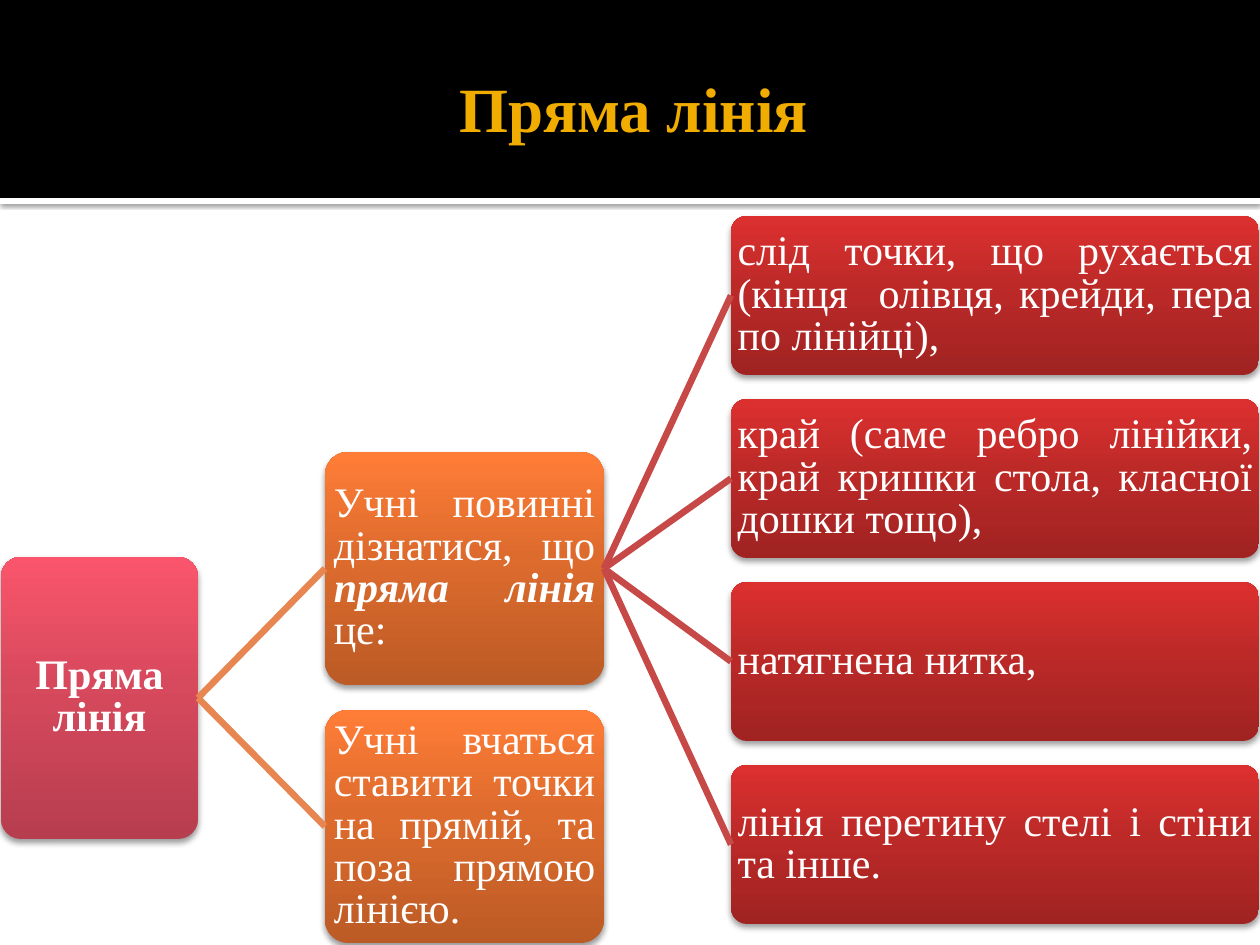
from pptx import Presentation
from pptx.dml.color import RGBColor
from pptx.enum.shapes import MSO_CONNECTOR, MSO_SHAPE
from pptx.enum.text import MSO_ANCHOR, PP_ALIGN
from pptx.oxml import parse_xml
from pptx.oxml.ns import nsdecls
from pptx.util import Pt

RECT, ROUNDED = MSO_SHAPE.RECTANGLE, MSO_SHAPE.ROUNDED_RECTANGLE
STRAIGHT = MSO_CONNECTOR.STRAIGHT
MIDDLE = MSO_ANCHOR.MIDDLE
CENTER, JUSTIFY = PP_ALIGN.CENTER, PP_ALIGN.JUSTIFY

EMU_PER_PX = 914400 / 126
FONT = "Times New Roman"
WHITE, BLACK, GOLD = "FFFFFF", "000000", "F0AD00"
ORANGE_LINE, RED_LINE = "E88651", "C64847"
# Gradient colours from bottom to top
PINK = ("B73E4F", "D7495D", "FA556C")
ORANGE = ("BC5B26", "DD6B2D", "FF7D37")
RED = ("A02322", "BC2A28", "DC302F")
STOPS = (0, 55, 100)

# Each text is a list of (wording, font format) spans
ROOT = [("Пряма лінія", {"bold": True})]
BRANCHES = [
    [("Учні повинні дізнатися, що ", {}),
     ("пряма лінія", {"bold": True, "italic": True}),
     (" це:", {})],
    [("Учні вчаться ставити точки на прямій, та поза прямою лінією.", {})],
]
LEAVES = [
    "слід точки, що рухається (кінця  олівця, крейди, пера по лінійці),",
    "край (саме ребро лінійки, край кришки стола, класної дошки тощо),",
    "натягнена нитка,",
    "лінія перетину стелі і стіни та інше.",
]


def px(value):
    return round(value * EMU_PER_PX)


def color(value):
    return RGBColor.from_string(value)


def set_values(target, values):
    for name, value in values.items():
        setattr(target, name, value)


def add_shadow(shape, opacity, blur, distance):
    shape._element.spPr.append(parse_xml(
        f'<a:effectLst {nsdecls("a")}><a:outerShdw blurRad="{Pt(blur)}" '
        f'dist="{Pt(distance)}" dir="5400000" rotWithShape="0">'
        f'<a:srgbClr val="{BLACK}"><a:alpha val="{opacity * 1000}"/></a:srgbClr>'
        '</a:outerShdw></a:effectLst>'))


def add_band(page, top, height, fill):
    band = page.shapes.add_shape(RECT, 0, px(top), px(1260), px(height))
    band.shadow.inherit = False
    band.fill.solid()
    band.fill.fore_color.rgb = color(fill)
    band.line.fill.background()
    return band


def write_text(shape, spans, margins, align, size, tint, spacing=1.0):
    frame = shape.text_frame
    left, top, right, bottom = (px(margin) for margin in margins)
    set_values(frame, {"word_wrap": True, "vertical_anchor": MIDDLE,
                       "margin_left": left, "margin_top": top,
                       "margin_right": right, "margin_bottom": bottom})
    para = frame.paragraphs[0]
    set_values(para, {"alignment": align, "line_spacing": spacing})
    for wording, style in spans:
        span = para.add_run()
        span.text = wording
        set_values(span.font, {"name": FONT, "size": Pt(size), **style})
        span.font.color.rgb = color(tint)


def add_title(page, spans):
    box = page.shapes.add_textbox(px(63), px(21), px(1134), px(173))
    write_text(box, spans, (13, 6, 6, 6), CENTER, 36, GOLD)


def add_node(page, place, gradient, spans, align=JUSTIFY):
    node = page.shapes.add_shape(ROUNDED, *(px(value) for value in place))
    node.adjustments[0] = 0.1
    node.line.fill.background()
    stops = "".join(
        f'<a:gs pos="{stop * 1000}"><a:srgbClr val="{tint}"/></a:gs>'
        for stop, tint in zip(STOPS, gradient))
    # The gradient belongs right after the geometry
    node._element.spPr.insert(2, parse_xml(
        f'<a:gradFill {nsdecls("a")} rotWithShape="1"><a:gsLst>{stops}</a:gsLst>'
        '<a:lin ang="16200000" scaled="0"/></a:gradFill>'))
    add_shadow(node, 38, 3.5, 2)
    write_text(node, spans, (2, 2, 2, 2), align, 24, WHITE, 0.84)
    return node


def add_link(page, parent, child, tint):
    link = page.shapes.add_connector(
        STRAIGHT, parent.left + parent.width, parent.top + parent.height // 2,
        child.left, child.top + child.height // 2)
    link.line.color.rgb = color(tint)
    link.line.width = Pt(3.78)
    link._element.spPr.append(parse_xml(f'<a:effectLst {nsdecls("a")}/>'))


def main():
    deck = Presentation()
    deck.slide_width, deck.slide_height = px(1260), px(945)
    page = deck.slides.add_slide(deck.slide_layouts[6])

    # Header: white strip with a shadow below the black band
    strip = add_band(page, 198, 6, WHITE)
    strip._element.spPr.remove(strip._element.spPr[-1])
    add_shadow(strip, 60, 2.5, 0.8)
    add_band(page, 0, 198, BLACK)
    add_title(page, ROOT)

    # Tree: root, branches, then the leaves of the first branch
    root = add_node(page, (1, 557, 197, 282), PINK, ROOT, CENTER)
    branches = [add_node(page, (325, 452 + 258 * row, 279, 233), ORANGE, spans)
                for row, spans in enumerate(BRANCHES)]
    leaves = [add_node(page, (731, 216 + 183 * row, 528, 159), RED, [(wording, {})])
              for row, wording in enumerate(LEAVES)]
    for branch in branches:
        add_link(page, root, branch, ORANGE_LINE)
    for leaf in leaves:
        add_link(page, branches[0], leaf, RED_LINE)

    deck.save("out.pptx")


if __name__ == "__main__":
    main()
